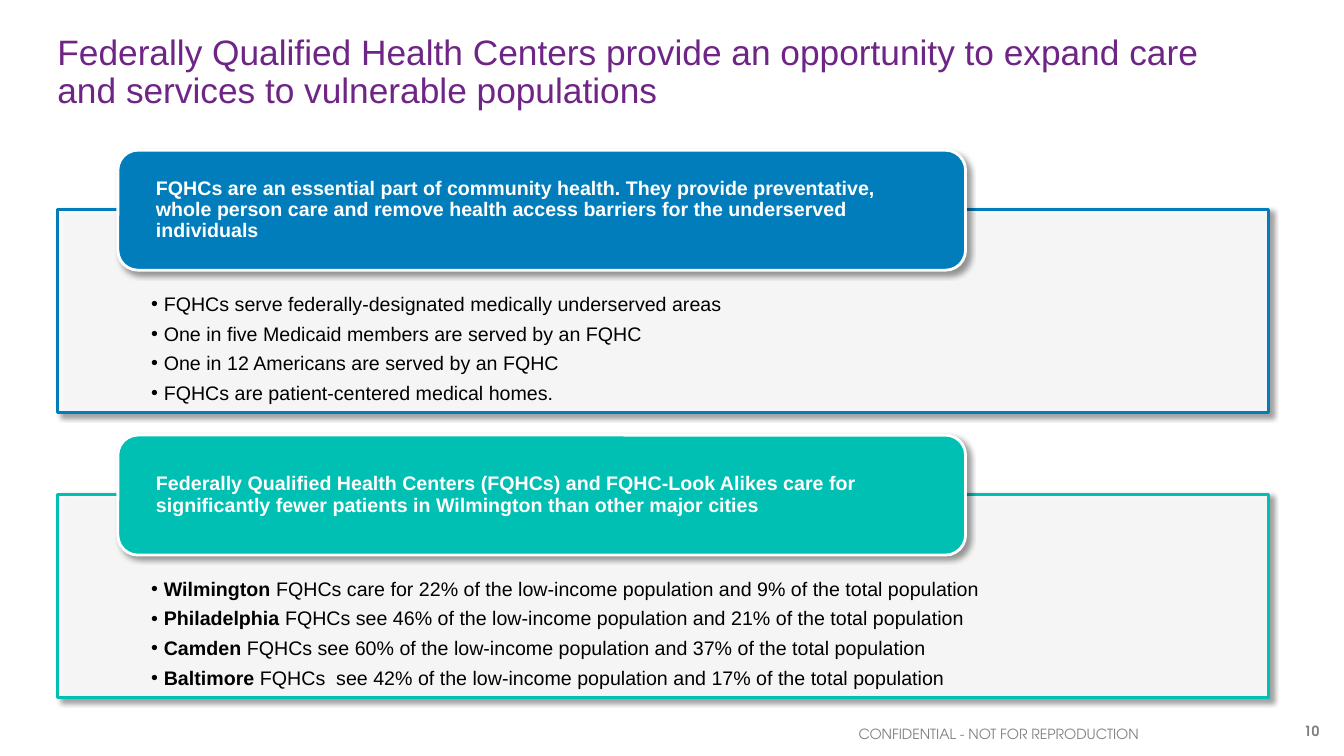
from lxml.etree import SubElement
from pptx import Presentation
from pptx.dml.color import RGBColor
from pptx.enum.shapes import MSO_SHAPE
from pptx.enum.text import MSO_ANCHOR, PP_ALIGN
from pptx.oxml.ns import qn
from pptx.util import Pt

COLORS = {
    "purple": "6E2585",
    "blue": "007DBA",
    "teal": "00BFB3",
    "white": "FFFFFF",
    "black": "000000",
    "gray": "808080",
}
BODY_FONT = "Arial"
FOOTER_FONT = "TeX Gyre Adventor"
SECTION_TOP = 107.3
SECTION_PITCH = 203.5

SECTIONS = [
    (
        "blue",
        "FQHCs are an essential part of community health. They provide preventative, "
        "whole person care and remove health access barriers for the underserved individuals",
        [
            ("", "FQHCs serve federally-designated medically underserved areas"),
            ("", "One in five Medicaid members are served by an FQHC"),
            ("", "One in 12 Americans are served by an FQHC"),
            ("", "FQHCs are patient-centered medical homes."),
        ],
    ),
    (
        "teal",
        "Federally Qualified Health Centers (FQHCs) and FQHC-Look Alikes care for "
        "significantly fewer patients in Wilmington than other major cities",
        [
            ("Wilmington", " FQHCs care for 22% of the low-income population and 9% of the total population"),
            ("Philadelphia", " FQHCs see 46% of the low-income population and 21% of the total population"),
            ("Camden", " FQHCs see 60% of the low-income population and 37% of the total population"),
            ("Baltimore", " FQHCs  see 42% of the low-income population and 17% of the total population"),
        ],
    ),
]


def rgb(color):
    return RGBColor.from_string(COLORS[color])


def set_font(paragraph, size, color, name=BODY_FONT, bold=False):
    font = paragraph.font
    font.name = name
    font.size = Pt(size)
    font.bold = bold
    font.color.rgb = rgb(color)


def set_frame(frame, insets, anchor=MSO_ANCHOR.TOP):
    frame.word_wrap = True
    frame.vertical_anchor = anchor
    frame.margin_left, frame.margin_top, frame.margin_right, frame.margin_bottom = map(Pt, insets)


def add_frame(slide, box, insets, anchor=MSO_ANCHOR.TOP):
    frame = slide.shapes.add_textbox(*map(Pt, box)).text_frame
    set_frame(frame, insets, anchor)
    return frame


def add_shadow(shape):
    shape.shadow.inherit = False
    effects = shape._element.spPr.find(qn("a:effectLst"))
    shadow = SubElement(
        effects, qn("a:outerShdw"), blurRad=str(Pt(4)), dist=str(Pt(3)),
        dir="2700000", algn="tl", rotWithShape="0",
    )
    tint = SubElement(shadow, qn("a:srgbClr"), val=COLORS["black"])
    SubElement(tint, qn("a:alpha"), val="40000")


def add_card(slide, preset, box, fill, outline):
    card = slide.shapes.add_shape(preset, *map(Pt, box))
    card.fill.solid()
    card.fill.fore_color.rgb = rgb(fill)
    card.line.color.rgb = rgb(outline)
    card.line.width = Pt(2)
    add_shadow(card)
    return card


def add_bullet(paragraph):
    properties = paragraph._p.get_or_add_pPr()
    properties.set("marL", str(Pt(9)))
    properties.set("indent", str(-Pt(9)))
    SubElement(properties, qn("a:buFont"), typeface=BODY_FONT)
    SubElement(properties, qn("a:buChar"), char="•")


def add_facts(slide, box, facts):
    frame = add_frame(slide, box, (67, 60.5, 67, 8))
    for index, (city, statement) in enumerate(facts):
        paragraph = frame.paragraphs[0] if index == 0 else frame.add_paragraph()
        paragraph.level = 1
        paragraph.line_spacing = 0.9
        paragraph.space_after = Pt(6)
        add_bullet(paragraph)
        set_font(paragraph, 14, "black")
        if city:
            lead = paragraph.add_run()
            lead.text = city
            lead.font.bold = True
        paragraph.add_run().text = statement


def add_section(slide, top, color, headline, facts):
    panel_box = (41, top + 42.6, 865, 144.7)
    panel = add_card(slide, MSO_SHAPE.RECTANGLE, panel_box, "white", color)
    panel_fill = panel._element.spPr.find(qn("a:solidFill"))
    SubElement(panel_fill[0], qn("a:alpha"), val="90000")
    add_facts(slide, panel_box, facts)

    add_card(slide, MSO_SHAPE.ROUNDED_RECTANGLE, (84.2, top, 605.5, 85.7), color, "white")
    frame = add_frame(slide, (88.4, top + 4, 597, 77.7), (23, 0, 23, 0), MSO_ANCHOR.MIDDLE)
    paragraph = frame.paragraphs[0]
    paragraph.text = headline
    paragraph.line_spacing = 0.9
    set_font(paragraph, 14, "white", bold=True)


def add_title(slide, wording):
    title = slide.shapes.title
    title.left, title.top, title.width, title.height = Pt(41), Pt(28), Pt(864), Pt(52.5)
    set_frame(title.text_frame, (0, 0, 7.2, 3.6), MSO_ANCHOR.MIDDLE)
    paragraph = title.text_frame.paragraphs[0]
    paragraph.text = wording
    paragraph.alignment = PP_ALIGN.LEFT
    paragraph.line_spacing = 0.9
    set_font(paragraph, 25.2, "purple")


def add_footer(slide, box, insets, wording, alignment, anchor, bold=False):
    paragraph = add_frame(slide, box, insets, anchor).paragraphs[0]
    paragraph.text = wording
    paragraph.alignment = alignment
    set_font(paragraph, 10, "gray", FOOTER_FONT, bold)


def main():
    deck = Presentation()
    deck.slide_width, deck.slide_height = Pt(960), Pt(540)
    slide = deck.slides.add_slide(deck.slide_layouts[5])

    add_title(
        slide,
        "Federally Qualified Health Centers provide an opportunity to expand care "
        "and services to vulnerable populations",
    )
    for index, section in enumerate(SECTIONS):
        add_section(slide, SECTION_TOP + index * SECTION_PITCH, *section)
    add_footer(slide, (900, 507.6, 42.5, 28.8), (7.2, 3.6, 0, 3.6), "10",
               PP_ALIGN.RIGHT, MSO_ANCHOR.MIDDLE, bold=True)
    add_footer(slide, (512, 514.8, 402.5, 19.4), (7.2, 3.6, 7.2, 3.6),
               "CONFIDENTIAL - NOT FOR REPRODUCTION", PP_ALIGN.CENTER, MSO_ANCHOR.TOP)
    deck.save("out.pptx")


if __name__ == "__main__":
    main()
